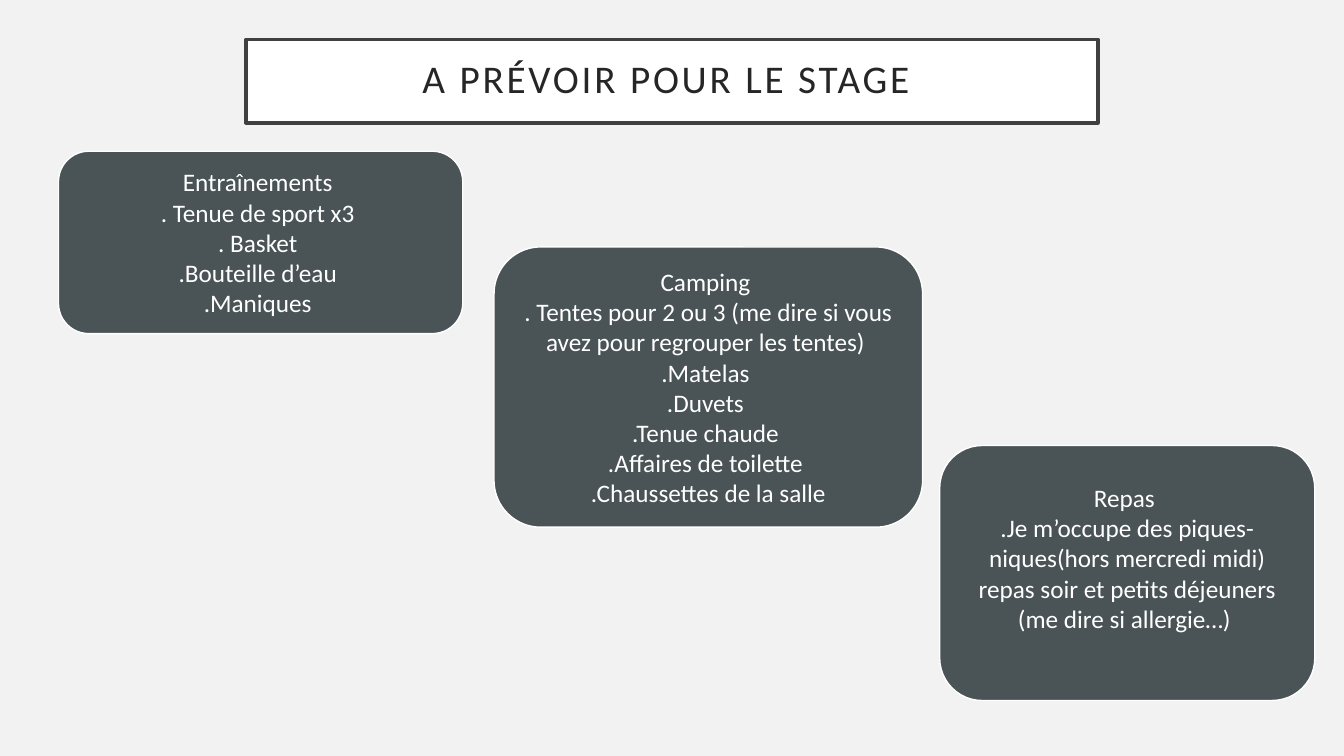
from pptx import Presentation
from pptx.dml.color import RGBColor
from pptx.enum.shapes import MSO_SHAPE as SHAPE
from pptx.enum.text import MSO_ANCHOR as ANCHOR, PP_ALIGN as ALIGN
from pptx.util import Inches, Pt

BACKGROUND = RGBColor(0xF2, 0xF2, 0xF2)
WHITE = RGBColor(0xFF, 0xFF, 0xFF)
FRAME = RGBColor(0x40, 0x40, 0x40)
TITLE_TEXT = RGBColor(0x26, 0x26, 0x26)
SLATE = RGBColor(0x4A, 0x53, 0x56)

TITLE = "A PRÉVOIR POUR LE STAGE "
TITLE_BOX = (2.44, 0.39, 8.45, 0.83)
CARDS = [
    ((0.58, 1.5, 4.01, 1.81), 0.05,
     ["Entraînements ", ". Tenue de sport x3 ", ". Basket ",
      ".Bouteille d’eau ", ".Maniques "]),
    ((4.9, 2.45, 4.25, 2.78), 0.05,
     ["Camping ",
      ". Tentes pour 2 ou 3 (me dire si vous avez pour regrouper les tentes) ",
      ".Matelas ", ".Duvets ", ".Tenue chaude ", ".Affaires de toilette ",
      ".Chaussettes de la salle"]),
    ((9.32, 4.42, 3.72, 2.53), 0.35,
     ["Repas ",
      ".Je m’occupe des piques-niques(hors mercredi midi) "
      "repas soir et petits déjeuners (me dire si allergie…) "]),
]


def add_box(s, kind, box, fill, line, width):
    """Add a filled, outlined shape without shadow."""
    sp = s.shapes.add_shape(kind, *map(Inches, box))
    sp.shadow.inherit = False
    sp.fill.solid()
    sp.fill.fore_color.rgb = fill
    sp.line.color.rgb = line
    sp.line.width = Pt(width)
    return sp


def write(sp, lines, size=18, color=WHITE, spacing=None, tracking=None):
    """Write centred paragraphs in a shape."""
    tf = sp.text_frame
    tf.word_wrap = True
    tf.vertical_anchor = ANCHOR.MIDDLE
    for i, line in enumerate(lines):
        p = tf.add_paragraph() if i else tf.paragraphs[0]
        p.alignment = ALIGN.CENTER
        p.line_spacing = spacing
        r = p.add_run()
        r.text = line
        r.font.name = "Calibri"
        r.font.size = Pt(size)
        r.font.color.rgb = color
        if tracking:
            r.font._element.set("spc", str(tracking * 100))


def add_title(s, box, text):
    """Add the framed title."""
    sp = add_box(s, SHAPE.RECTANGLE, box, WHITE, FRAME, 2.5)
    tf = sp.text_frame
    tf.margin_left = tf.margin_right = Inches(0.2)
    tf.margin_top = tf.margin_bottom = Inches(0.2)
    write(sp, [text], size=28, color=TITLE_TEXT, spacing=0.9, tracking=2)


def add_card(s, box, bottom_margin, lines):
    """Add a rounded card holding one checklist."""
    sp = add_box(s, SHAPE.ROUNDED_RECTANGLE, box, SLATE, WHITE, 1)
    sp.text_frame.margin_bottom = Inches(bottom_margin)
    write(sp, lines)


def main():
    """Build and save the slide."""
    prs = Presentation()
    prs.slide_width, prs.slide_height = Inches(13.33), Inches(7.5)
    s = prs.slides.add_slide(prs.slide_layouts[6])
    s.background.fill.solid()
    s.background.fill.fore_color.rgb = BACKGROUND
    add_title(s, TITLE_BOX, TITLE)
    for box, bottom_margin, lines in CARDS:
        add_card(s, box, bottom_margin, lines)
    prs.save("out.pptx")


if __name__ == "__main__":
    main()
